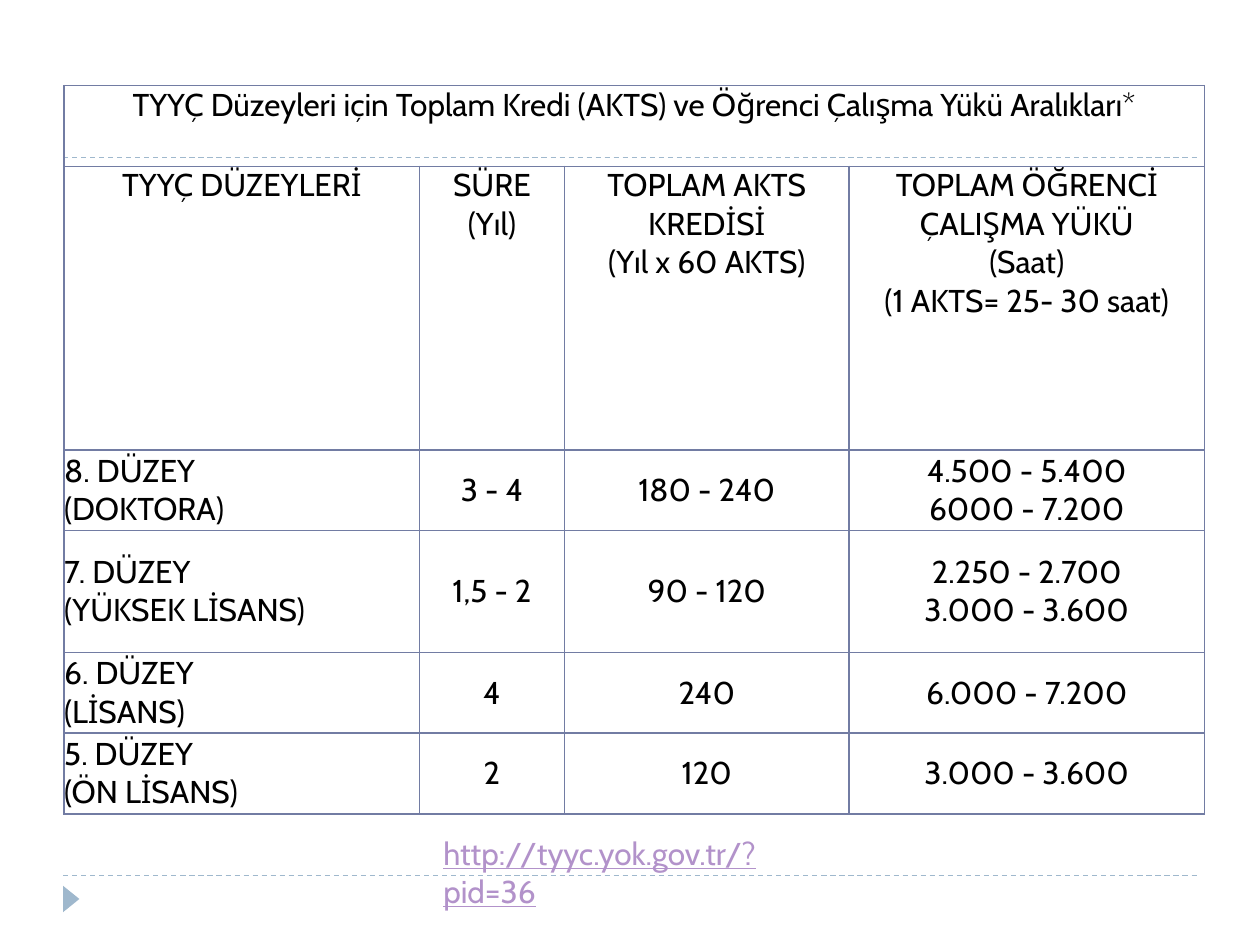
from dataclasses import dataclass
from lxml.etree import SubElement as Sub
from pptx import Presentation
from pptx.dml.color import RGBColor as RGB
from pptx.enum.dml import MSO_LINE
from pptx.enum.shapes import MSO_CONNECTOR as Link, MSO_SHAPE as Kind
from pptx.enum.text import MSO_ANCHOR as Anchor, PP_ALIGN as Align
from pptx.oxml.ns import qn
from pptx.util import Inches, Pt


@dataclass(frozen=True)
class Theme:
    font: str = "Cabin"
    size: int = 18
    ink: str = "000000"
    link: str = "B292CA"
    rule: str = "9FB8CD"
    grid: str = "727CA3"
    thin: float = 0.75
    edge: float = 1


THEME = Theme()
COLS = [2.82, 1.15, 2.26, 2.82]
ROWS = [0.64, 2.25, 0.64, 0.97, 0.64, 0.64]
TITLE = "TYYÇ Düzeyleri için Toplam Kredi (AKTS) ve Öğrenci Çalışma Yükü Aralıkları*"
HEADS = [
    "TYYÇ DÜZEYLERİ",
    "SÜRE\n(Yıl)",
    "TOPLAM AKTS KREDİSİ\n(Yıl x 60 AKTS)",
    "TOPLAM ÖĞRENCİ ÇALIŞMA YÜKÜ\n(Saat)\n(1 AKTS= 25- 30 saat)",
]
LEVELS = [
    ["8. DÜZEY\n(DOKTORA)", "3 - 4", "180 - 240", "4.500 - 5.400\n6000 - 7.200"],
    ["7. DÜZEY\n(YÜKSEK LİSANS)", "1,5 - 2", "90 - 120", "2.250 - 2.700\n3.000 - 3.600"],
    ["6. DÜZEY\n(LİSANS)", "4", "240", "6.000 - 7.200"],
    ["5. DÜZEY\n(ÖN LİSANS)", "2", "120", "3.000 - 3.600"],
]


def write(frame, text, color, align=Align.LEFT, under=None):
    para = frame.paragraphs[0]
    para.alignment = align
    for i, line in enumerate(text.split("\n")):
        if i:
            para.add_line_break()
        run = para.add_run()
        run.text = line
        run.font.name = THEME.font
        run.font.size = Pt(THEME.size)
        run.font.color.rgb = RGB.from_string(color)
        run.font.underline = under


def add_rule(slide, left, top, width):
    line = slide.shapes.add_connector(
        Link.STRAIGHT, Inches(left), Inches(top), Inches(left + width), Inches(top))
    line.line.color.rgb = RGB.from_string(THEME.rule)
    line.line.width = Pt(THEME.thin)
    line.line.dash_style = MSO_LINE.DASH
    Sub(line._element.spPr, qn("a:effectLst"))


def add_mark(slide, box):
    mark = slide.shapes.add_shape(Kind.ISOSCELES_TRIANGLE, *map(Inches, box))
    mark.rotation = 90
    mark.shadow.inherit = False
    mark.fill.solid()
    mark.fill.fore_color.rgb = RGB.from_string(THEME.rule)
    mark.line.fill.background()


def style_cell(cell, anchor):
    cell.margin_left = cell.margin_right = cell.margin_top = cell.margin_bottom = 0
    cell.vertical_anchor = anchor
    props = cell._tc.get_or_add_tcPr()
    for side in ("lnL", "lnR", "lnT", "lnB"):
        edge = Sub(props, qn(f"a:{side}"), w=str(Pt(THEME.edge)))
        Sub(Sub(edge, qn("a:solidFill")), qn("a:srgbClr"), val=THEME.grid)
    cell.fill.background()


def add_grid(slide, box):
    data = [[TITLE, "", "", ""], HEADS, *LEVELS]
    table = slide.shapes.add_table(len(ROWS), len(COLS), *map(Inches, box)).table
    table.first_row = table.horz_banding = False
    for col, width in zip(table.columns, COLS):
        col.width = Inches(width)
    for row, height in zip(table.rows, ROWS):
        row.height = Inches(height)
    for r, line in enumerate(data):
        for c, text in enumerate(line):
            cell = table.cell(r, c)
            style_cell(cell, Anchor.MIDDLE if r > 1 else Anchor.TOP)
            if text:
                align = Align.LEFT if r > 1 and c == 0 else Align.CENTER
                write(cell.text_frame, text, THEME.ink, align)
    table.cell(0, 0).merge(table.cell(0, len(COLS) - 1))


def add_link(slide, box):
    frame = slide.shapes.add_textbox(*map(Inches, box)).text_frame
    frame.word_wrap = True
    write(frame, "http://tyyc.yok.gov.tr/?pid=36", THEME.link, under=True)


def main():
    deck = Presentation()
    deck.slide_width, deck.slide_height = Inches(10), Inches(7.5)
    slide = deck.slides.add_slide(deck.slide_layouts[6])
    for top in (6.95, 1.25):
        add_rule(slide, 0.5, top, 9)
    add_mark(slide, (0.46, 7.07, 0.21, 0.13))
    add_grid(slide, (0.51, 0.68, sum(COLS), sum(ROWS)))
    add_link(slide, (3.42, 6.57, 3.16, 0.4))
    deck.save("out.pptx")


if __name__ == "__main__":
    main()
